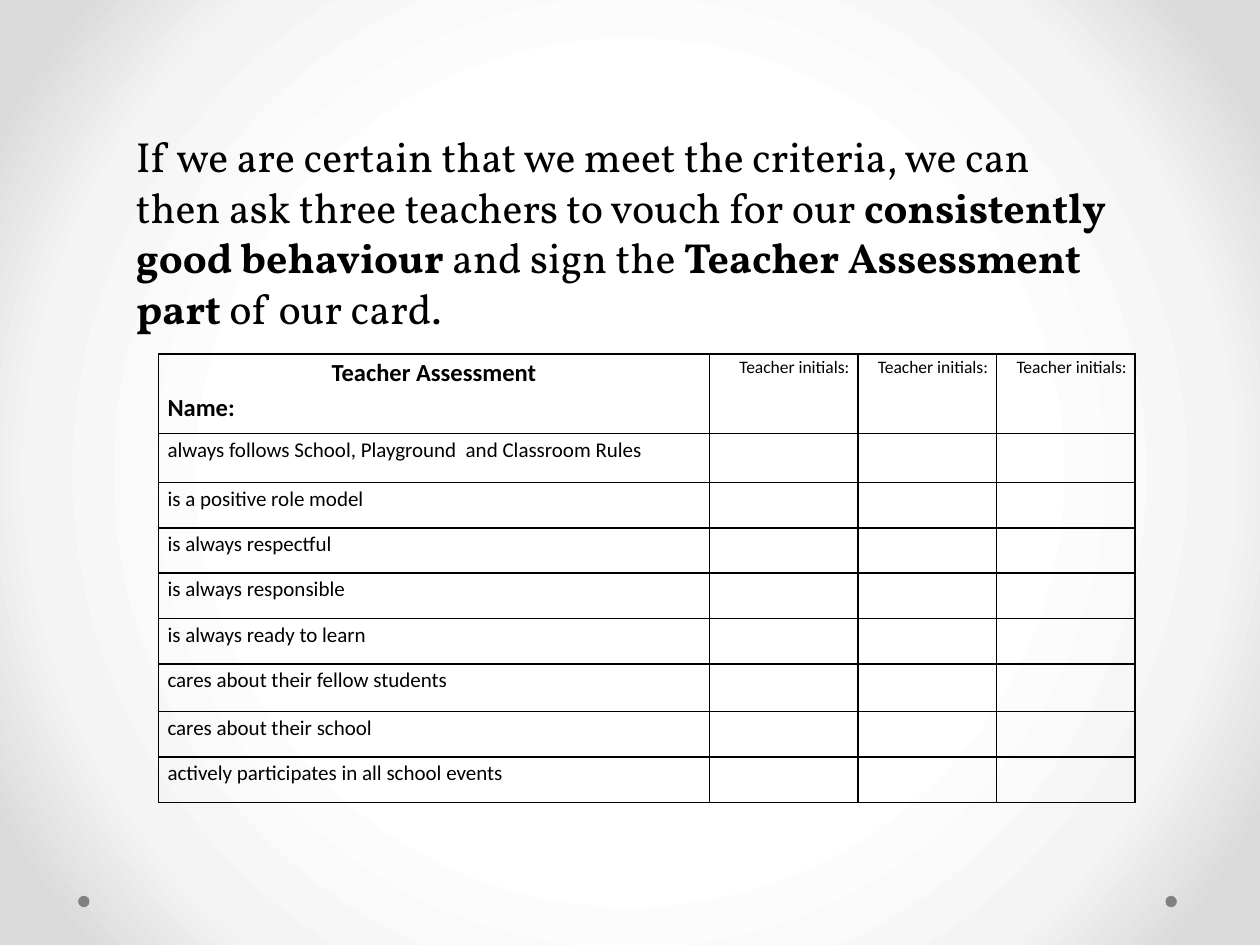
from lxml import etree
from pptx import Presentation
from pptx.dml.color import RGBColor
from pptx.enum.shapes import MSO_SHAPE
from pptx.enum.text import PP_ALIGN
from pptx.oxml import parse_xml
from pptx.oxml.ns import nsdecls, qn
from pptx.util import Inches, Pt

BLACK = RGBColor(0x00, 0x00, 0x00)
GREY = RGBColor(0x80, 0x80, 0x80)
GLOW_STOPS = [(50, RGBColor(0xFF, 0xFF, 0xFF)),
              (76, RGBColor(0xF4, 0xF4, 0xF4)),
              (92, RGBColor(0xDA, 0xDA, 0xDA))]

INTRO = [
    ("If we are certain that we meet the criteria, we can then "
     "ask three teachers to vouch for our ", False),
    ("consistently good behaviour ", True),
    ("and sign the ", False),
    ("Teacher Assessment part ", True),
    ("of our card.", False),
]
CRITERIA = [
    "always follows School, Playground  and Classroom Rules",
    "is a positive role model",
    "is always respectful",
    "is always responsible",
    "is always ready to learn",
    "cares about their fellow students",
    "cares about their school",
    "actively participates in all school events",
]
COL_WIDTHS = [4.37, 1.18, 1.1, 1.1]
ROW_HEIGHTS = [0.63, 0.39, 0.36, 0.36, 0.36, 0.36, 0.38, 0.36, 0.36]


def add_run(p, text, font, size, bold=False):
    r = p.add_run()
    r.text = text
    r.font.name = font
    r.font.size = Pt(size)
    r.font.bold = bold
    r.font.color.rgb = BLACK


def set_radial_background(s):
    s.background.fill.gradient()
    grad = s.background._cSld.find(".//" + qn("a:gradFill"))
    stops = "".join(
        f'<a:gs pos="{pos * 1000}"><a:srgbClr val="{color}"/></a:gs>'
        for pos, color in GLOW_STOPS)
    radial = parse_xml(
        f'<a:gradFill {nsdecls("a")} rotWithShape="1"><a:gsLst>{stops}</a:gsLst>'
        '<a:path path="circle"><a:fillToRect l="50000" t="50000" r="50000" '
        'b="50000"/></a:path></a:gradFill>')
    grad.getparent().replace(grad, radial)


def add_corner_dots(s, lefts, top, size):
    for left in lefts:
        dot = s.shapes.add_shape(MSO_SHAPE.OVAL, left, top, size, size)
        dot.shadow.inherit = False
        dot.fill.solid()
        dot.fill.fore_color.rgb = GREY
        dot.line.fill.background()


def add_intro(s, left, top, width, height):
    tf = s.shapes.add_textbox(left, top, width, height).text_frame
    tf.word_wrap = True
    for text, bold in INTRO:
        add_run(tf.paragraphs[0], text, "Vollkorn", 24, bold)


def set_borders(cell):
    tcPr = cell._tc.get_or_add_tcPr()
    for i, side in enumerate(("lnL", "lnR", "lnT", "lnB")):
        ln = etree.Element(qn(f"a:{side}"), w=str(Pt(1)))
        fill = etree.SubElement(ln, qn("a:solidFill"))
        etree.SubElement(fill, qn("a:srgbClr"), val=str(BLACK))
        tcPr.insert(i, ln)


def fill_cell(cell, lines, size, bold=False):
    """Write (text, alignment) lines, one paragraph each."""
    tf = cell.text_frame
    for i, (text, align) in enumerate(lines):
        p = tf.add_paragraph() if i else tf.paragraphs[0]
        p.alignment = align
        p.line_spacing = 1.15
        add_run(p, text, "Calibri", size, bold)


def add_assessment_table(s, left, top, width, height):
    table = s.shapes.add_table(len(ROW_HEIGHTS), len(COL_WIDTHS),
                               left, top, width, height).table
    table.first_row = table.horz_banding = False
    for col, w in zip(table.columns, COL_WIDTHS):
        col.width = Inches(w)
    for row, h in zip(table.rows, ROW_HEIGHTS):
        row.height = Inches(h)
    for cell in table.iter_cells():
        cell.margin_left = cell.margin_right = Inches(0.07)
        cell.margin_top = cell.margin_bottom = 0
        cell.fill.background()
        set_borders(cell)
        cell.text_frame.paragraphs[0].font.size = Pt(12)

    fill_cell(table.cell(0, 0), [("Teacher Assessment", PP_ALIGN.CENTER),
                                 ("Name:", PP_ALIGN.LEFT)], 14, True)
    for c in range(1, len(COL_WIDTHS)):
        fill_cell(table.cell(0, c), [("Teacher initials:", PP_ALIGN.RIGHT)], 10)
    for r, criterion in enumerate(CRITERIA, start=1):
        fill_cell(table.cell(r, 0), [(criterion, PP_ALIGN.LEFT)], 12)


def main():
    prs = Presentation()
    prs.slide_width, prs.slide_height = Inches(10), Inches(7.5)
    s = prs.slides.add_slide(prs.slide_layouts[6])
    set_radial_background(s)
    add_corner_dots(s, (Inches(0.62), Inches(9.25)), Inches(7.11), Inches(0.09))
    add_intro(s, Inches(0.98), Inches(0.99), Inches(8.03), Inches(1.72))
    add_assessment_table(s, Inches(1.26), Inches(2.81), Inches(7.76), Inches(3.55))
    prs.save("out.pptx")


if __name__ == "__main__":
    main()
